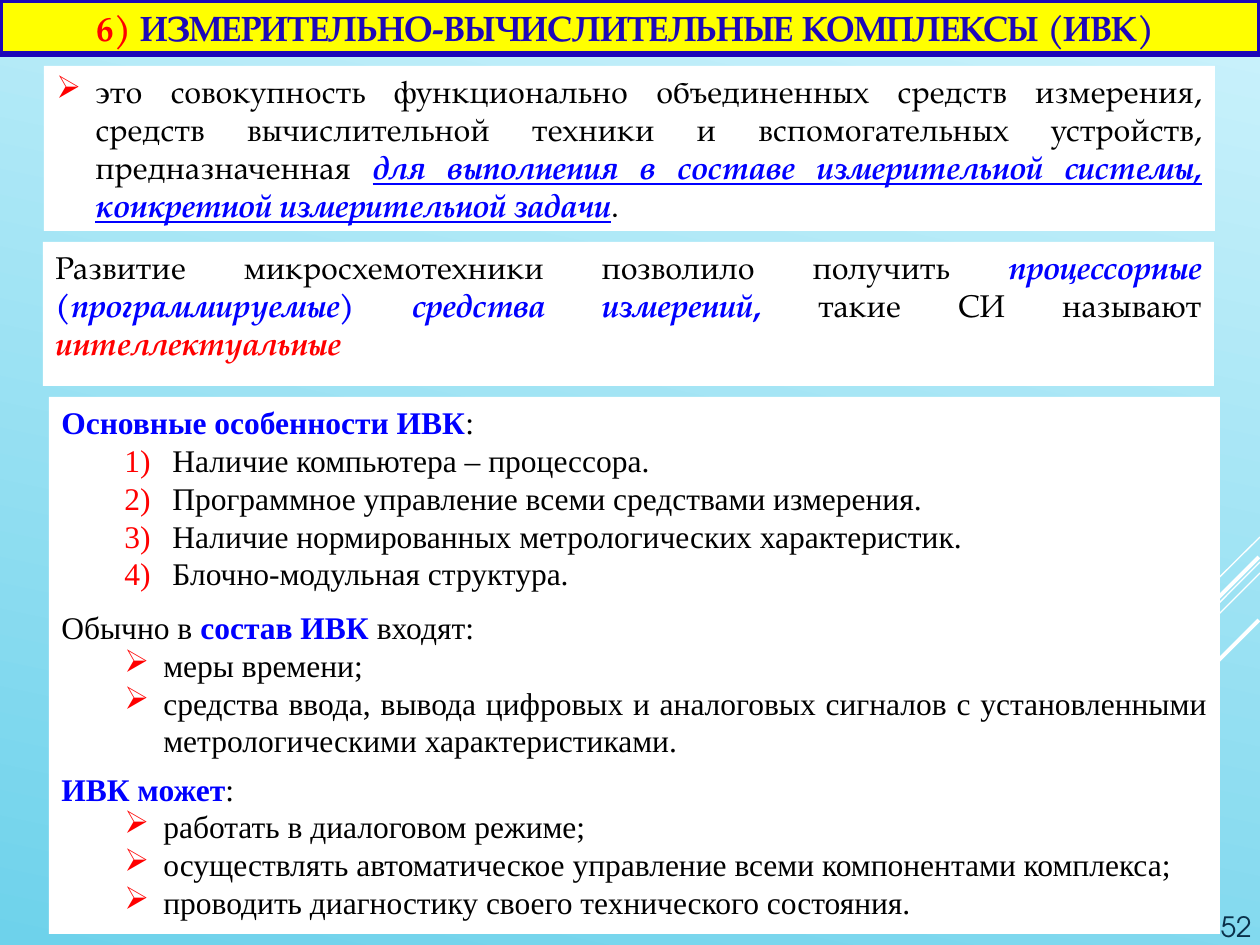
import pptx
import pptx.util
import pptx.dml.color
import pptx.enum.shapes
import pptx.enum.text
import pptx.oxml
import pptx.oxml.ns
from lxml import etree

RGB = pptx.dml.color.RGBColor
ALIGN = pptx.enum.text.PP_ALIGN
ANCHOR = pptx.enum.text.MSO_ANCHOR
WHITE = RGB(255, 255, 255)
BLACK = RGB(0, 0, 0)
RED = RGB(255, 0, 0)
BLUE = RGB(0, 0, 255)
INDIGO = RGB(0x1D, 0x08, 0xB8)
YELLOW = RGB(255, 255, 0)
NAVY = RGB(0x0A, 0x30, 0x4A)
SKY_LIGHT = RGB(0xC8, 0xF1, 0xFB)
SKY_DARK = RGB(0x6E, 0xD2, 0xEB)

SERIF = "TeX Gyre Pagella"
TIMES = "Times New Roman"
SANS = "TeX Gyre Adventor"

# Run styles: colour, bold, italic, underline
KEY = (BLUE, True, False, False)
TERM = (BLUE, True, True, False)
TERM_LINE = (BLUE, True, True, True)
ACCENT = (RED, True, True, False)

ARROW = ("buChar", "char", "➢")
NUMBER = ("buAutoNum", "type", "arabicParenR")


class SlideBuilder:
    EMU_PER_PX = 914400 / 126

    def __init__(self, slide):
        self.slide = slide

    def px(self, *lengths):
        return [pptx.util.Emu(round(n * self.EMU_PER_PX)) for n in lengths]

    def background(self, start, end):
        fill = self.slide.background.fill
        fill.gradient()
        fill.gradient_angle = 258
        for stop, color, position in zip(fill.gradient_stops, (start, end), (0.04, 1)):
            stop.color.rgb = color
            stop.position = position

    def line(self, x1, y1, x2, y2, width):
        stroke = self.slide.shapes.add_connector(
            pptx.enum.shapes.MSO_CONNECTOR.STRAIGHT, *self.px(x1, y1, x2, y2))
        stroke.line.color.rgb = WHITE
        stroke.line.width = pptx.util.Pt(width)
        etree.SubElement(stroke._element.spPr, pptx.oxml.ns.qn("a:effectLst"))

    def panel(self, x, y, w, h, fill=WHITE, border=None):
        panel = self.slide.shapes.add_shape(
            pptx.enum.shapes.MSO_SHAPE.RECTANGLE, *self.px(x, y, w, h))
        panel.shadow.inherit = False
        panel.fill.solid()
        panel.fill.fore_color.rgb = fill
        if border:
            panel.line.color.rgb = border
            panel.line.width = pptx.util.Pt(3)
        else:
            panel.line.fill.background()
        return self.frame(panel, ANCHOR.TOP)

    def text_box(self, x, y, w, h, anchor):
        return self.frame(self.slide.shapes.add_textbox(*self.px(x, y, w, h)), anchor)

    def frame(self, shape, anchor):
        frame = shape.text_frame
        frame.word_wrap = True
        frame.vertical_anchor = anchor
        return frame

    def paragraph(self, frame, runs, font=SERIF, size=18, color=BLACK, bold=False,
                  align=ALIGN.JUSTIFY, bullet=None, indent=(0, 0), level=0, before=0):
        """Each run is plain text or a (text, style) pair."""
        first = frame.paragraphs[0]
        paragraph = frame.add_paragraph() if first.runs else first
        paragraph.alignment = align
        paragraph.level = level
        paragraph.space_before = pptx.util.Pt(before)
        if bullet:
            self.bullet(paragraph, bullet, indent)
        paragraph.font.name = font
        paragraph.font.size = pptx.util.Pt(size)
        paragraph.font.bold = bold
        paragraph.font.color.rgb = color
        for item in runs:
            run = paragraph.add_run()
            if isinstance(item, str):
                run.text = item
            else:
                run.text, style = item
                (run.font.color.rgb, run.font.bold,
                 run.font.italic, run.font.underline) = style

    def bullet(self, paragraph, bullet, indent):
        qn = pptx.oxml.ns.qn
        props = paragraph._p.get_or_add_pPr()
        for name, length in zip(("marL", "indent"), self.px(*indent)):
            props.set(name, str(int(length)))
        color = etree.SubElement(props, qn("a:buClr"))
        etree.SubElement(color, qn("a:srgbClr"), val=str(RED))
        tag, attribute, value = bullet
        etree.SubElement(props, qn("a:" + tag)).set(attribute, value)


def main():
    presentation = pptx.Presentation()
    presentation.slide_width = pptx.util.Inches(10)
    presentation.slide_height = pptx.util.Inches(7.5)
    b = SlideBuilder(presentation.slides.add_slide(presentation.slide_layouts[6]))

    # Background with diagonal strokes
    b.background(SKY_LIGHT, SKY_DARK)
    for stroke in ((1260, 537, 1155, 641, 0.75), (1260, 562, 920, 903, 0.75),
                   (1260, 573, 1043, 790, 0.75), (1259, 557, 1061, 755, 2.25),
                   (1259, 620, 1115, 764, 2.25)):
        b.line(*stroke)

    # Definition
    definition = b.panel(44, 66, 1171, 165)
    b.paragraph(definition, [
        "это совокупность функционально объединенных средств измерения, средств "
        "вычислительной техники и вспомогательных устройств, предназначенная ",
        ("для выполнения в составе измерительной системы, "
         "конкретной измерительной задачи", TERM_LINE),
        "."], bullet=ARROW, indent=(39, -39))

    # Page number
    page = b.text_box(1145, 857, 119, 92, ANCHOR.BOTTOM)
    b.paragraph(page, ["52"], SANS, 16, NAVY, align=ALIGN.RIGHT)

    # Title
    title = b.panel(0, 0, 1260, 54, YELLOW, INDIGO)
    b.paragraph(title, [("6)", (RED, True, False, False)),
                        " ИЗМЕРИТЕЛЬНО-ВЫЧИСЛИТЕЛЬНЫЕ КОМПЛЕКСЫ (ИВК) "],
                size=20, color=INDIGO, bold=True, align=ALIGN.CENTER)

    # Intelligent instruments
    intelligent = b.panel(43, 242, 1171, 144)
    b.paragraph(intelligent, [
        "Развитие микросхемотехники позволило получить ",
        ("процессорные (программируемые) средства измерений", TERM),
        (", ", KEY), "такие СИ называют ", ("интеллектуальные", ACCENT)])

    # Features, composition and abilities
    details = b.panel(49, 397, 1171, 537)
    sections = (
        ([("Основные особенности ИВК", KEY), ":"], 0, NUMBER, (111, -48), (
            "Наличие компьютера – процессора.",
            "Программное управление всеми средствами измерения.",
            "Наличие нормированных метрологических характеристик.",
            "Блочно-модульная структура.")),
        (["Обычно в ", ("состав ИВК ", KEY), "входят:"], 9, ARROW, (102, -39), (
            "меры времени; ",
            "средства ввода, вывода цифровых и аналоговых сигналов "
            "с установленными метрологическими характеристиками.")),
        ([("ИВК может", KEY), ":"], 6, ARROW, (102, -39), (
            "работать в диалоговом режиме; ",
            "осуществлять автоматическое управление всеми компонентами комплекса;",
            "проводить диагностику своего технического состояния.")),
    )
    for heading, gap, bullet, indent, items in sections:
        b.paragraph(details, heading, TIMES, before=gap)
        for item in items:
            b.paragraph(details, [item], TIMES, bullet=bullet, indent=indent, level=1)

    presentation.save("out.pptx")


if __name__ == "__main__":
    main()
